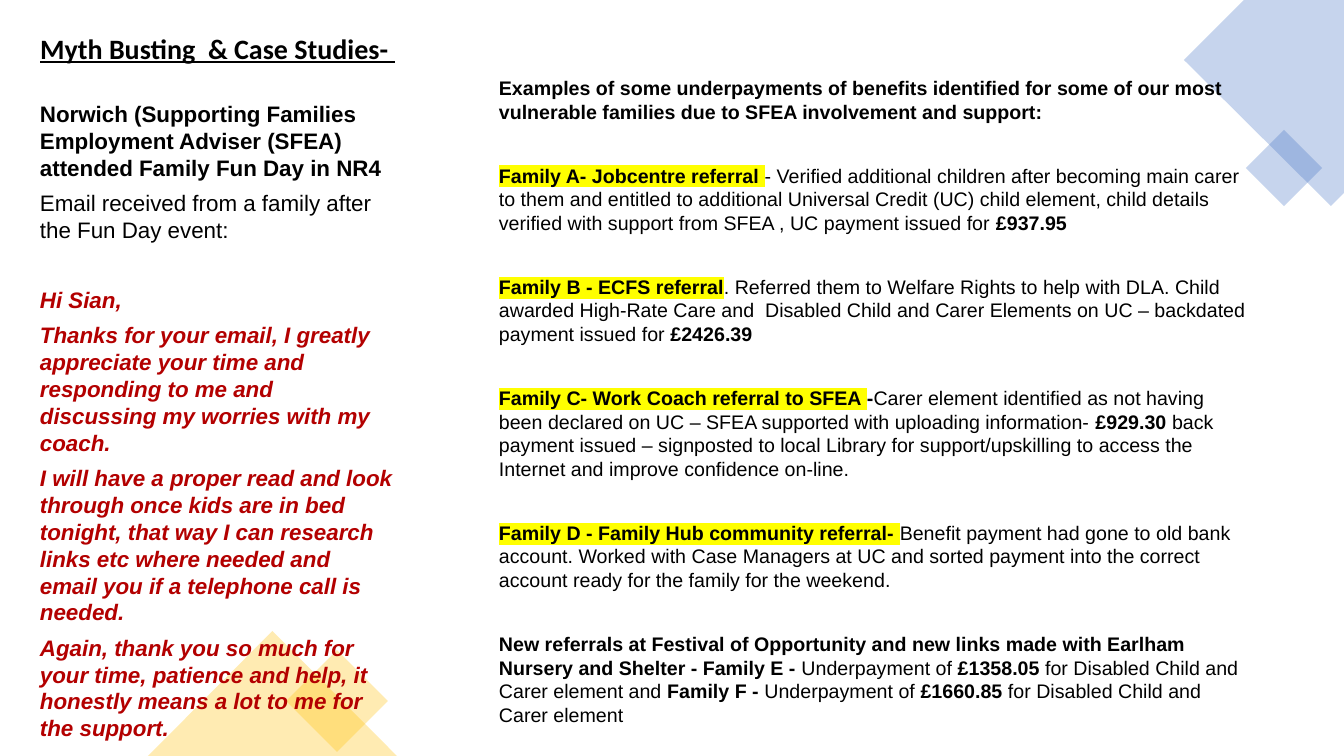
from lxml import etree
from pptx import Presentation
from pptx import util as u
from pptx.dml.color import RGBColor
from pptx.enum import shapes, text
from pptx.oxml.ns import qn

PX = 914400 / 100.8
COLOURS = {
    "black": "000000",
    "red": "B30000",
    "blue": "4472C4",
    "gold": "FFC000",
    "yellow": "FFFF00",
}
STYLES = {
    "plain": {},
    "bold": {"bold": True},
    "mark": {"bold": True, "highlight": "yellow"},
    "quote": {"bold": True, "italic": True, "colour": "red"},
    "title": {"bold": True, "underline": True},
}


def px(n):
    return u.Emu(round(n * PX))


class SlideBuilder:
    def __init__(self, prs):
        self.s = prs.slides.add_slide(prs.slide_layouts[5])

    def tint(self, sp, colour, alpha=30):
        sp.shadow.inherit = False
        sp.fill.solid()
        sp.fill.fore_color.rgb = RGBColor.from_string(COLOURS[colour])
        clr = sp.fill._xPr.find(qn("a:solidFill"))[0]
        etree.SubElement(clr, qn("a:alpha"), val=str(alpha * 1000))
        sp.line.fill.background()

    def shape(self, kind, box, colour, rotation=0):
        sp = self.s.shapes.add_shape(kind, *map(px, box))
        sp.rotation = rotation
        self.tint(sp, colour)

    def outline(self, points, colour):
        fb = self.s.shapes.build_freeform(*points[0], scale=PX)
        fb.add_line_segments(points[1:], close=True)
        self.tint(fb.convert_to_shape(), colour)

    def run(self, p, words, style, font, size):
        look = STYLES[style]
        r = p.add_run()
        r.text = words
        f = r.font
        f.name, f.size = font, u.Pt(size)
        f.bold = look.get("bold", False)
        f.italic = look.get("italic", False)
        f.underline = look.get("underline", False)
        f.color.rgb = RGBColor.from_string(COLOURS[look.get("colour", "black")])
        if "highlight" in look:
            hl = etree.Element(qn("a:highlight"))
            etree.SubElement(hl, qn("a:srgbClr"), val=COLOURS[look["highlight"]])
            r._r.rPr.find(qn("a:solidFill")).addnext(hl)

    def title(self, box, words, font, size):
        sp = self.s.shapes.title
        sp.left, sp.top, sp.width, sp.height = map(px, box)
        tf = sp.text_frame
        tf.word_wrap = True
        tf.auto_size = text.MSO_AUTO_SIZE.NONE
        tf.vertical_anchor = text.MSO_ANCHOR.MIDDLE
        p = tf.paragraphs[0]
        p.alignment = text.PP_ALIGN.LEFT
        self.run(p, words, "title", font, size)

    def column(self, box, paragraphs, size, gap, font="Arial"):
        tf = self.s.shapes.add_textbox(*map(px, box)).text_frame
        tf.word_wrap = True
        for i, (spaced, runs) in enumerate(paragraphs):
            p = tf.paragraphs[0] if i == 0 else tf.add_paragraph()
            p.space_before = u.Pt(gap if spaced else 0)
            p.space_after = u.Pt(6)
            for words, style in runs:
                self.run(p, words, style, font, size)


EMAIL = [
    (False, [("Norwich (Supporting Families Employment Adviser (SFEA) attended "
              "Family Fun Day in NR4", "bold")]),
    (False, [("Email received from a family after the Fun Day event:", "plain")]),
    (True, [("Hi Sian,", "quote")]),
    (False, [("Thanks for your email, I greatly appreciate your time and responding "
              "to me and discussing my worries with my coach.", "quote")]),
    (False, [("I will have a proper read and look through once kids are in bed "
              "tonight, that way I can research links etc where needed and email "
              "you if a telephone call is needed.", "quote")]),
    (False, [("Again, thank you so much for your time, patience and help, it "
              "honestly means a lot to me for the support.", "quote")]),
]

CASES = [
    (False, [("Examples of some underpayments of benefits identified for some of our "
              "most vulnerable families due to SFEA involvement and support:", "bold")]),
    (True, [("Family A- Jobcentre referral ", "mark"),
            ("- Verified additional children after becoming main carer to them and "
             "entitled to additional Universal Credit (UC) child element, child "
             "details verified with support from SFEA , UC payment issued for ", "plain"),
            ("£937.95", "bold")]),
    (True, [("Family B - ECFS referral", "mark"),
            (". Referred them to Welfare Rights to help with DLA. Child awarded "
             "High-Rate Care and  Disabled Child and Carer Elements on UC – "
             "backdated payment issued for ", "plain"),
            ("£2426.39", "bold")]),
    (True, [("Family C- Work Coach referral to SFEA ", "mark"),
            ("-", "bold"),
            ("Carer element identified as not having been declared on UC – SFEA "
             "supported with uploading information- ", "plain"),
            ("£929.30 ", "bold"),
            ("back payment issued – signposted to local Library for "
             "support/upskilling to access the Internet and improve confidence "
             "on-line.", "plain")]),
    (True, [("Family D - Family Hub community referral- ", "mark"),
            ("Benefit payment had gone to old bank account. Worked with Case "
             "Managers at UC and sorted payment into the correct account ready for "
             "the family for the weekend.", "plain")]),
    (True, [("New referrals at Festival of Opportunity and new links made with "
             "Earlham Nursery and Shelter - Family E - ", "bold"),
            ("Underpayment of ", "plain"),
            ("£1358.05", "bold"),
            (" for Disabled Child and Carer element and ", "plain"),
            ("Family F - ", "bold"),
            ("Underpayment of", "plain"),
            (" £1660.85", "bold"),
            (" for Disabled Child and Carer element", "plain")]),
]


def main():
    prs = Presentation()
    prs.slide_width, prs.slide_height = px(1344), px(756)
    b = SlideBuilder(prs)
    kinds = shapes.MSO_SHAPE
    b.outline([(1344, 0), (1244, 0), (1184, 60), (1331, 206), (1344, 193)], "blue")
    b.shape(kinds.RECTANGLE, (1257, 141, 54, 54), "blue", 315)
    b.shape(kinds.RECTANGLE, (301, 665, 72, 72), "gold", 45)
    b.shape(kinds.ISOSCELES_TRIANGLE, (148, 631, 249, 125), "gold")
    b.column((30, 95, 373, 658), EMAIL, 16, 25)
    b.column((489, 71, 770, 680), CASES, 14, 23)
    b.title((30, 26, 398, 44), "Myth Busting  & Case Studies- ", "Calibri", 20)
    prs.save("out.pptx")


if __name__ == "__main__":
    main()
